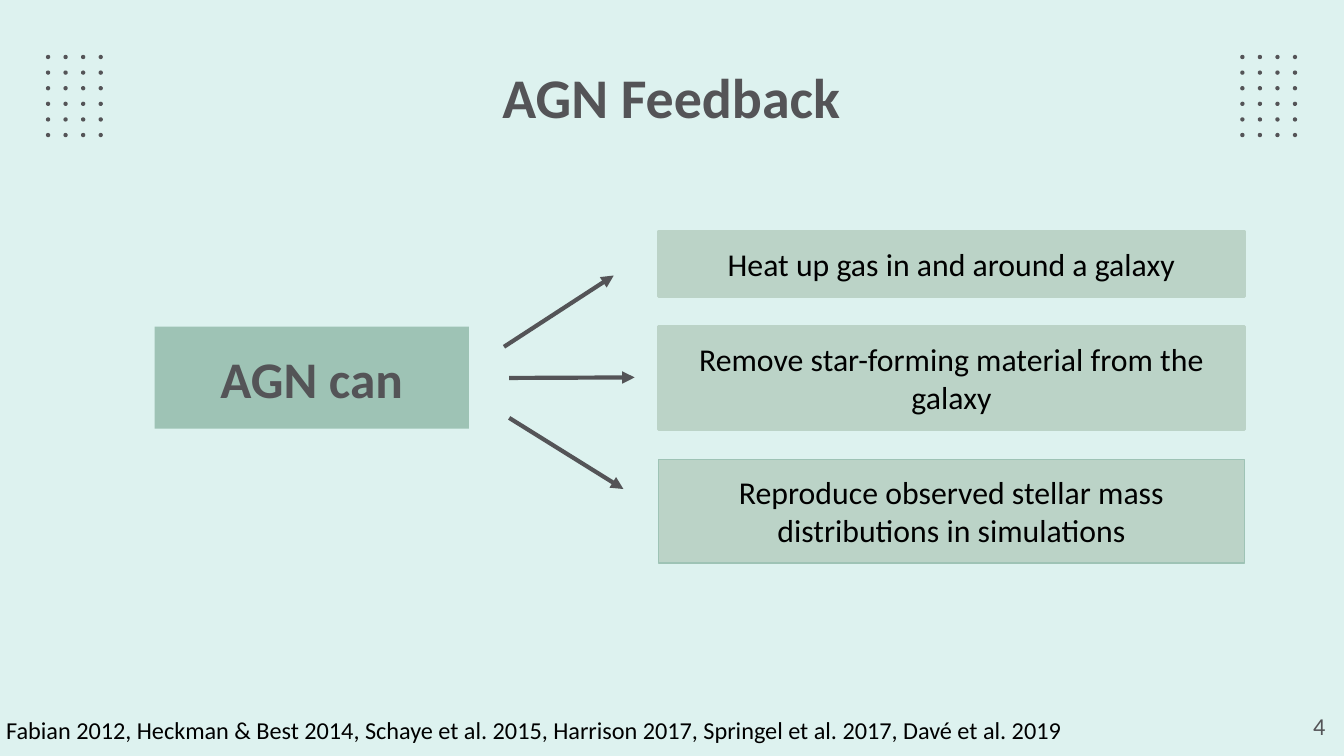
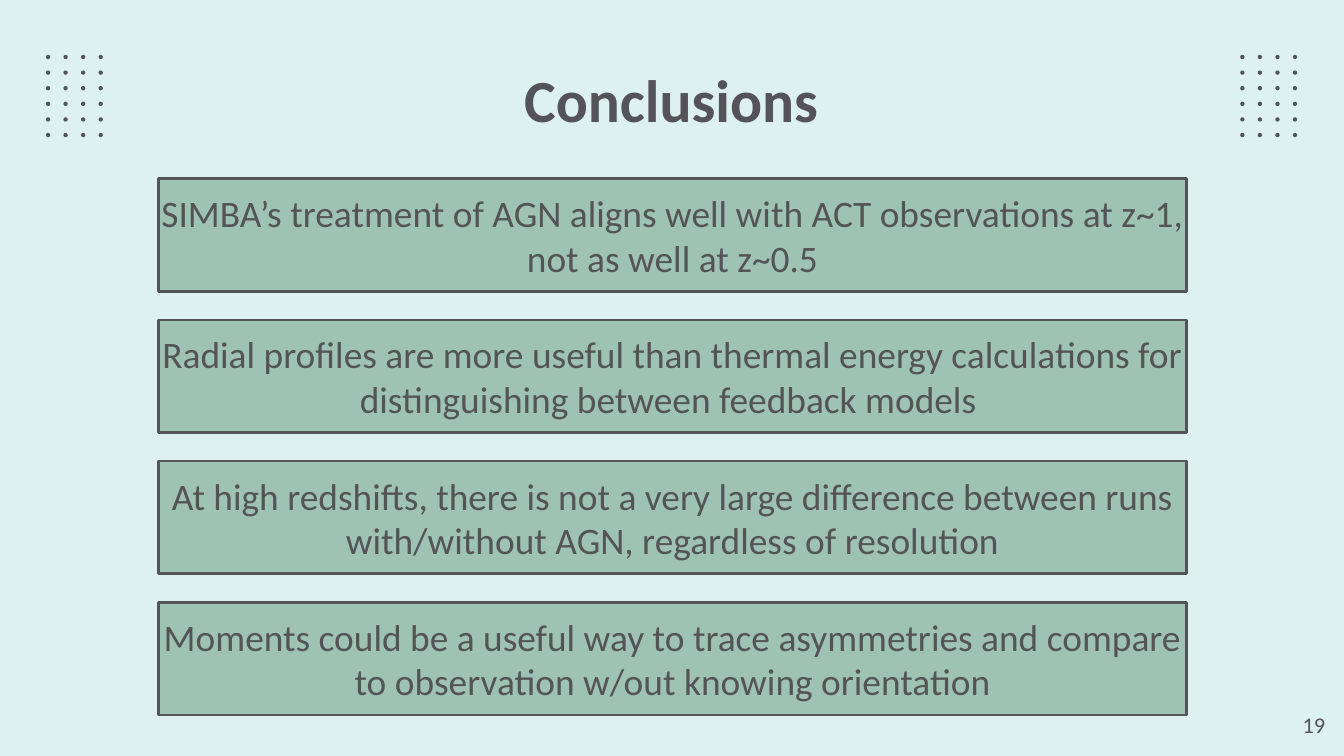
from pptx import Presentation
from pptx.dml.color import RGBColor
from pptx.enum.shapes import MSO_CONNECTOR, MSO_SHAPE
from pptx.enum.text import MSO_ANCHOR, PP_ALIGN
from pptx.oxml.ns import qn
from pptx.util import Pt
from lxml import etree

RECT, OVAL = MSO_SHAPE.RECTANGLE, MSO_SHAPE.OVAL
STRAIGHT = MSO_CONNECTOR.STRAIGHT
TOP, MIDDLE = MSO_ANCHOR.TOP, MSO_ANCHOR.MIDDLE
LEFT, CENTER, RIGHT = PP_ALIGN.LEFT, PP_ALIGN.CENTER, PP_ALIGN.RIGHT

# Content
FEEDBACK = {
    "title": "AGN Feedback",
    "number": "4",
    "cause": "AGN can",
    # text, box height, line colour, line width
    "effects": [
        ("Heat up gas in and around a galaxy", 35.2, "sage", 1.5),
        ("Remove star-forming material from the galaxy", 55.4, "sage", 1.5),
        ("Reproduce observed stellar mass distributions in simulations", 55.4, "green", 0.75),
    ],
    "arrows": [
        ((270, 185.8), (328.8, 147.6)),
        ((272.8, 202.5), (340, 202.2)),
        ((272.8, 223.9), (334, 262)),
    ],
    "sources": "Fabian 2012, Heckman & Best 2014, Schaye et al. 2015, Harrison 2017, "
               "Springel et al. 2017, Davé et al. 2019",
}
CONCLUSIONS = {
    "title": "Conclusions",
    "number": "19",
    "points": [
        "SIMBA’s treatment of AGN aligns well with ACT observations at z~1, not as well at z~0.5",
        "Radial profiles are more useful than thermal energy calculations for "
        "distinguishing between feedback models ",
        "At high redshifts, there is not a very large difference between runs "
        "with/without AGN, regardless of resolution",
        "Moments could be a useful way to trace asymmetries and compare to "
        "observation w/out knowing orientation",
    ],
}


class Theme:
    font = "Calibri"
    colors = {
        "mint": RGBColor.from_string("DDF2EF"),
        "gray": RGBColor.from_string("545457"),
        "green": RGBColor.from_string("9EC3B5"),
        "sage": RGBColor.from_string("BBD3C7"),
        "black": RGBColor.from_string("000000"),
    }
    cause, point, effect, source = 27.5, 20, 17, 13
    inset = (7.2, 7.2, 7.2, 7.2)
    title_inset = (7.2, 5, 7.2, 7.2)
    no_inset = (0, 0, 0, 0)


# Helpers
def set_all(obj, values):
    for name, value in values.items():
        setattr(obj, name, value)


def write(sp, text, size, color="gray", bold=False, align=CENTER, anchor=TOP, inset=Theme.inset):
    tf = sp.text_frame
    sides = ("margin_left", "margin_top", "margin_right", "margin_bottom")
    set_all(tf, {"word_wrap": True, "vertical_anchor": anchor,
                 **{side: Pt(v) for side, v in zip(sides, inset)}})
    p = tf.paragraphs[0]
    p.alignment = align
    r = p.add_run()
    r.text = text
    set_all(r.font, {"name": Theme.font, "size": Pt(size), "bold": bold})
    r.font.color.rgb = Theme.colors[color]


def add_text(s, box, text, size, **style):
    write(s.shapes.add_textbox(*map(Pt, box)), text, size, **style)


def add_shape(shapes, kind, box, fill, line=None, width=1.5):
    sp = shapes.add_shape(kind, *map(Pt, box))
    sp.shadow.inherit = False
    sp.fill.solid()
    sp.fill.fore_color.rgb = Theme.colors[fill]
    if line:
        sp.line.color.rgb = Theme.colors[line]
        sp.line.width = Pt(width)
    else:
        sp.line.fill.background()
    return sp


def add_arrow(s, start, end):
    cx = s.shapes.add_connector(STRAIGHT, *map(Pt, start + end))
    cx.line.color.rgb = Theme.colors["gray"]
    cx.line.width = Pt(2.25)
    etree.SubElement(cx.line._get_or_add_ln(), qn("a:tailEnd"), type="triangle")
    etree.SubElement(cx._element.spPr, qn("a:effectLst"))


def add_dots(s, left, top=29.4, cols=4, rows=6, dx=9.4, dy=8.36, size=2.3):
    group = s.shapes.add_group_shape()
    for row in range(rows):
        for col in range(cols):
            add_shape(group.shapes, OVAL, (left + col * dx, top + row * dy, size, size), "gray")


def new_slide(prs, content, title_size, number_size):
    """Background, dot grids, title and slide number."""
    s = prs.slides.add_slide(prs.slide_layouts[6])
    s.background.fill.solid()
    s.background.fill.fore_color.rgb = Theme.colors["mint"]
    for left in (24.6, 664.4):
        add_dots(s, left)
    add_text(s, (24.5, 28.8, 670.4, 45.4), content["title"], title_size,
             bold=True, inset=Theme.title_inset)
    add_text(s, (673.9, 373.7, 43.2, 31), content["number"], number_size, align=RIGHT)
    return s


# Slides
def feedback_slide(prs):
    s = new_slide(prs, FEEDBACK, title_size=30, number_size=13)
    sp = add_shape(s.shapes, RECT, (82.8, 175, 168.5, 54.7), "green")
    write(sp, FEEDBACK["cause"], Theme.cause, bold=True, anchor=MIDDLE, inset=Theme.no_inset)

    # Effects, stacked with an equal gap
    top, gap = 123.8, 15.9
    for text, height, line, width in FEEDBACK["effects"]:
        sp = add_shape(s.shapes, RECT, (352.8, top, 313.9, height), "sage", line, width)
        write(sp, text, Theme.effect, color="black")
        top += height + gap

    for start, end in FEEDBACK["arrows"]:
        add_arrow(s, start, end)
    add_text(s, (-3.8, 375.8, 677.5, 30.2), FEEDBACK["sources"], Theme.source,
             color="black", align=LEFT)


def conclusions_slide(prs):
    s = new_slide(prs, CONCLUSIONS, title_size=32, number_size=12)
    top, pitch = 95.8, 75.6
    for i, text in enumerate(CONCLUSIONS["points"]):
        sp = add_shape(s.shapes, RECT, (84.9, top + i * pitch, 550.8, 60.5), "green", "gray")
        write(sp, text, Theme.point, anchor=MIDDLE, inset=Theme.no_inset)


def main():
    prs = Presentation()
    set_all(prs, {"slide_width": Pt(720), "slide_height": Pt(405)})
    feedback_slide(prs)
    conclusions_slide(prs)
    prs.save("out.pptx")


if __name__ == "__main__":
    main()
